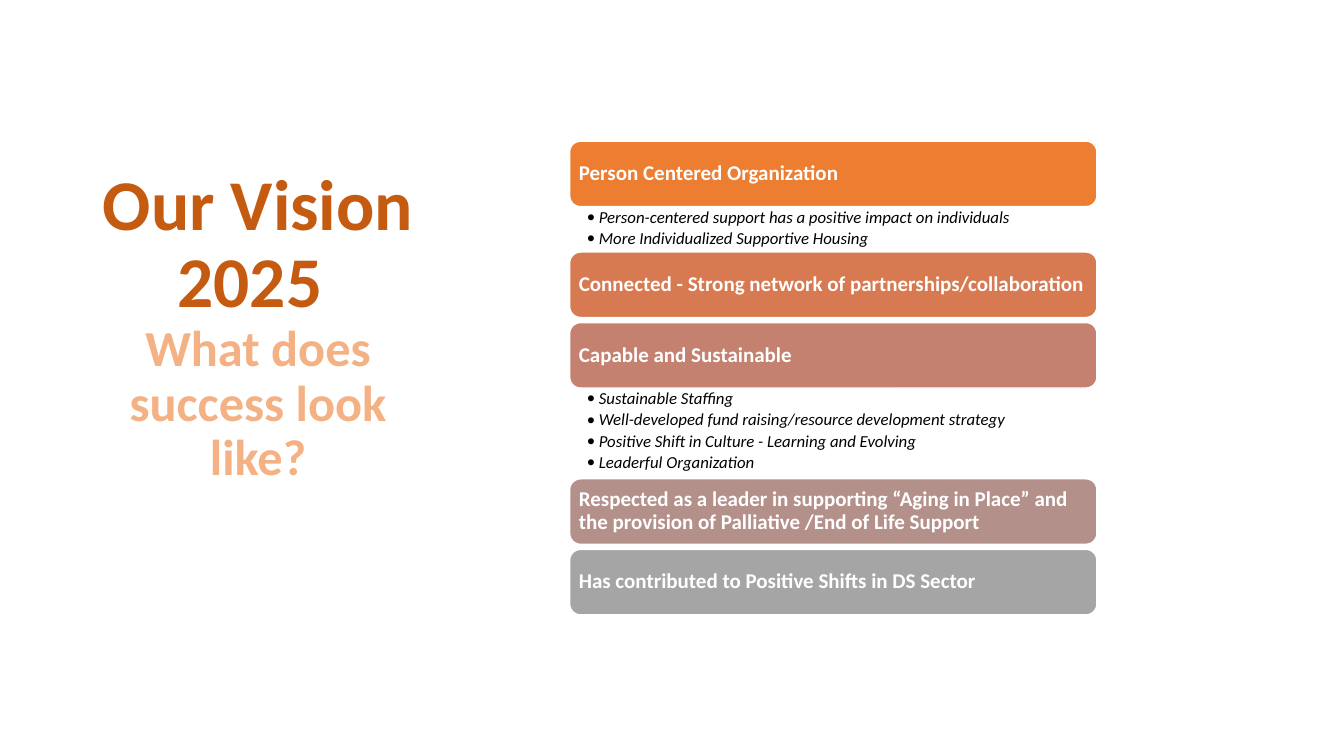
from lxml.etree import SubElement
from pptx import Presentation
from pptx.dml.color import RGBColor
from pptx.enum.shapes import MSO_SHAPE as Shape
from pptx.enum.text import MSO_ANCHOR as Anchor, MSO_AUTO_SIZE as AutoSize, PP_ALIGN as Align
from pptx.oxml.ns import qn
from pptx.util import Inches, Pt

WHITE = RGBColor(0xFF, 0xFF, 0xFF)
BLACK = RGBColor(0x00, 0x00, 0x00)
RUST = RGBColor(0xC5, 0x5A, 0x11)
PEACH = RGBColor(0xF4, 0xB1, 0x83)
ORANGE = RGBColor(0xED, 0x7D, 0x31)
COPPER = RGBColor(0xD8, 0x7A, 0x51)
ROSE = RGBColor(0xC4, 0x81, 0x70)
MAUVE = RGBColor(0xB4, 0x90, 0x8B)
GRAY = RGBColor(0xA5, 0xA5, 0xA5)

TITLE = [("Our Vision 2025 ", 51, RUST), ("What does success look like?", 36, PEACH)]
GOALS = [
    ("Person Centered Organization", ORANGE, [
        "Person-centered support has a positive impact on individuals",
        "More Individualized Supportive Housing",
    ]),
    ("Connected - Strong network of partnerships/collaboration", COPPER, []),
    ("Capable and Sustainable", ROSE, [
        "Sustainable Staffing",
        "Well-developed fund raising/resource development strategy",
        "Positive Shift in Culture - Learning and Evolving",
        "Leaderful Organization",
    ]),
    ("Respected as a leader in supporting “Aging in Place” and "
     "the provision of Palliative /End of Life Support", MAUVE, []),
    ("Has contributed to Positive Shifts in DS Sector", GRAY, []),
]

LEFT, TOP, WIDTH = 5.65, 1.4, 5.23
BAR_HEIGHT, BAR_GAP, ITEM_HEIGHT = 0.65, 0.05, 0.225


def set_frame(frame, insets, anchor):
    frame.word_wrap = True
    frame.auto_size = AutoSize.NONE
    frame.vertical_anchor = anchor
    (frame.margin_left, frame.margin_top,
     frame.margin_right, frame.margin_bottom) = map(Inches, insets)


def write(frame, text, size, color, bold=False, italic=False,
          align=Align.LEFT, after=0, bullet=False):
    para = frame.paragraphs[0]
    if para.runs:
        para = frame.add_paragraph()
    para.alignment = align
    para.line_spacing = 0.9
    para.space_before = Pt(0)
    para.space_after = Pt(after)
    if bullet:
        properties = para._p.get_or_add_pPr()
        properties.set("marL", str(Inches(0.12)))
        properties.set("indent", str(-Inches(0.12)))
        SubElement(properties, qn("a:buFont")).set("typeface", "Calibri")
        SubElement(properties, qn("a:buChar")).set("char", "•")
    span = para.add_run()
    span.text = text
    font = span.font
    font.name, font.size, font.bold, font.italic = "Calibri", Pt(size), bold, italic
    font.color.rgb = color


def add_bar(slide, text, color, top):
    bar = slide.shapes.add_shape(Shape.ROUNDED_RECTANGLE, Inches(LEFT), Inches(top),
                                 Inches(WIDTH), Inches(BAR_HEIGHT))
    bar.shadow.inherit = False
    bar.fill.solid()
    bar.fill.fore_color.rgb = color
    bar.line.color.rgb = WHITE
    bar.line.width = Pt(1)
    set_frame(bar.text_frame, (0.06, 0.06, 0.06, 0.06), Anchor.MIDDLE)
    write(bar.text_frame, text, 15, WHITE, bold=True)


def add_list(slide, items, top, height):
    box = slide.shapes.add_textbox(Inches(LEFT), Inches(top), Inches(WIDTH), Inches(height))
    set_frame(box.text_frame, (0.17, 0.02, 0.12, 0.02), Anchor.TOP)
    for item in items:
        write(box.text_frame, item, 12, BLACK, italic=True, after=2.2, bullet=True)


def main():
    deck = Presentation()
    deck.slide_width, deck.slide_height = Inches(13.33), Inches(7.5)
    slide = deck.slides.add_slide(deck.slide_layouts[5])

    title = slide.shapes.title
    title.left, title.top, title.width, title.height = map(Inches, (0.67, 1.15, 3.78, 5.05))
    set_frame(title.text_frame, (0.1, 0.05, 0.1, 0.9), Anchor.MIDDLE)
    for text, size, color in TITLE:
        write(title.text_frame, text, size, color, bold=True, align=Align.CENTER)

    top = TOP
    for heading, color, items in GOALS:
        add_bar(slide, heading, color, top)
        top += BAR_HEIGHT
        if items:
            height = len(items) * ITEM_HEIGHT
            add_list(slide, items, top, height)
            top += height
        else:
            top += BAR_GAP

    deck.save("out.pptx")


if __name__ == "__main__":
    main()
